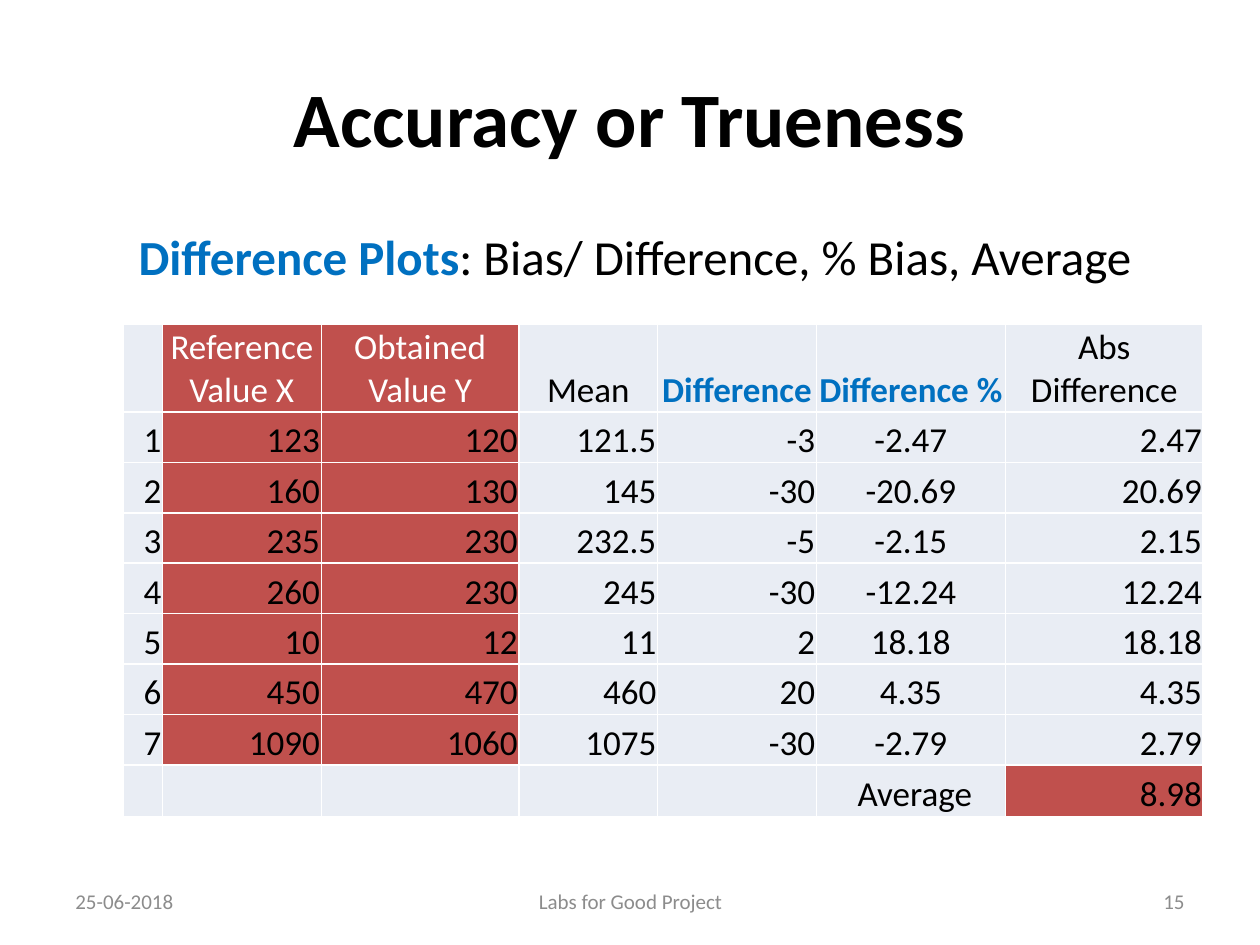
import pptx
import pptx.dml.color
import pptx.enum.text
import pptx.oxml
import pptx.oxml.ns
import pptx.util

RGBColor = pptx.dml.color.RGBColor
ALIGN = pptx.enum.text.PP_ALIGN
ANCHOR = pptx.enum.text.MSO_ANCHOR

BLACK = RGBColor(0x00, 0x00, 0x00)
WHITE = RGBColor(0xFF, 0xFF, 0xFF)
BLUE = RGBColor(0x00, 0x70, 0xC0)
RED = RGBColor(0xC0, 0x50, 0x4D)
PALE = RGBColor(0xE9, 0xED, 0xF4)
GRAY = RGBColor(0x8C, 0x8C, 0x8C)

HEADER = ["", "Reference Value X", "Obtained Value Y", "Mean",
          " Difference", "Difference %", "Abs Difference"]
ROWS = [
    ["1", "123", "120", "121.5", "-3", "-2.47", "2.47"],
    ["2", "160", "130", "145", "-30", "-20.69", "20.69"],
    ["3", "235", "230", "232.5", "-5", "-2.15", "2.15"],
    ["4", "260", "230", "245", "-30", "-12.24", "12.24"],
    ["5", "10", "12", "11", "2", "18.18", "18.18"],
    ["6", "450", "470", "460", "20", "4.35", "4.35"],
    ["7", "1090", "1060", "1075", "-30", "-2.79", "2.79"],
]
FOOTER = ["", "", "", "", "", "\N{NO-BREAK SPACE}Average", "8.98"]
COL_WIDTHS = [3.1, 12.6, 15.7, 11, 12.6, 15, 15.7]
ROW_HEIGHTS = [7] + [4] * 7 + [4.1]


class Deck:
    font = "Calibri"
    grid_cols, grid_rows = 100, 75

    def __init__(self, width, height):
        self.prs = pptx.Presentation()
        self.prs.slide_width = pptx.util.Inches(width)
        self.prs.slide_height = pptx.util.Inches(height)
        self.s = self.prs.slides.add_slide(self.prs.slide_layouts[1])

    def x(self, cols):
        return round(self.prs.slide_width * cols / self.grid_cols)

    def y(self, rows):
        return round(self.prs.slide_height * rows / self.grid_rows)

    def place(self, sp, left, top, width, height):
        box = {"left": self.x(left), "top": self.y(top),
               "width": self.x(width), "height": self.y(height)}
        for name, value in box.items():
            setattr(sp, name, value)

    def run(self, p, text, size, color, bold=False):
        r = p.add_run()
        r.text = text
        style = {"name": self.font, "size": pptx.util.Pt(size), "bold": bold}
        for name, value in style.items():
            setattr(r.font, name, value)
        r.font.color.rgb = color

    def title(self, text, *box):
        sp = self.s.shapes.title
        self.place(sp, *box)
        sp.text_frame.vertical_anchor = ANCHOR.MIDDLE
        p = sp.text_frame.paragraphs[0]
        p.alignment = ALIGN.CENTER
        self.run(p, text, 44, BLACK, True)

    def body(self, parts, *box):
        sp = self.s.placeholders[1]
        self.place(sp, *box)
        p = sp.text_frame.paragraphs[0]
        p.level = 1
        pPr = p._p.get_or_add_pPr()
        pPr.set("marL", str(self.x(5)))
        pPr.set("indent", "0")
        pPr.append(pptx.oxml.parse_xml(
            f"<a:buNone {pptx.oxml.ns.nsdecls('a')}/>"))
        for text, color, bold in parts:
            self.run(p, text, 28, color, bold)

    def label(self, text, align, *box):
        sp = self.s.shapes.add_textbox(0, 0, 0, 0)
        self.place(sp, *box)
        tf = sp.text_frame
        tf.word_wrap = True
        tf.vertical_anchor = ANCHOR.MIDDLE
        p = tf.paragraphs[0]
        p.alignment = align
        self.run(p, text, 12, GRAY)

    def borders(self, cell, color):
        tcPr = cell._tc.get_or_add_tcPr()
        for i, side in enumerate(("lnL", "lnR", "lnT", "lnB")):
            tcPr.insert(i, pptx.oxml.parse_xml(
                f'<a:{side} {pptx.oxml.ns.nsdecls("a")} w="12700"><a:solidFill>'
                f'<a:srgbClr val="{color}"/></a:solidFill></a:{side}>'))

    def cell(self, cell, text, fill, color, bold, align):
        cell.fill.solid()
        cell.fill.fore_color.rgb = fill
        self.borders(cell, WHITE)
        if not text:
            return
        edge = pptx.util.Inches(0.01)
        layout = {"margin_left": edge, "margin_right": edge, "margin_top": edge,
                  "margin_bottom": 0, "vertical_anchor": ANCHOR.BOTTOM}
        for name, value in layout.items():
            setattr(cell, name, value)
        p = cell.text_frame.paragraphs[0]
        p.alignment = align
        self.run(p, text, 20, color, bold)

    def table(self, rows, left, top, widths, heights):
        table = self.s.shapes.add_table(
            len(rows), len(widths), self.x(left), self.y(top),
            self.x(sum(widths)), self.y(sum(heights))).table
        for col, width in zip(table.columns, widths):
            col.width = self.x(width)
        for row, height in zip(table.rows, heights):
            row.height = self.y(height)
        last = len(rows) - 1
        for i, row in enumerate(rows):
            for j, text in enumerate(row):
                head = i == 0
                measured = j in (1, 2) and i < last
                average = (i, j) == (last, len(row) - 1)
                key = head and j in (4, 5)
                fill = RED if measured or average else PALE
                color = BLUE if key else WHITE if head and measured else BLACK
                align = ALIGN.CENTER if head or j == 5 else ALIGN.RIGHT
                self.cell(table.cell(i, j), text, fill, color, key, align)


def main():
    deck = Deck(10, 7.5)
    deck.title("Accuracy or Trueness", 5, 3, 90, 12.5)
    deck.body([("Difference Plots", BLUE, True),
               (": Bias/ Difference, % Bias, Average", BLACK, False)],
              5, 17.5, 90.7, 52.3)
    deck.table([HEADER, *ROWS, FOOTER], 9.8, 25.7, COL_WIDTHS, ROW_HEIGHTS)
    deck.label("25-06-2018", ALIGN.LEFT, 5, 69.5, 23.3, 4)
    deck.label("Labs for Good Project", ALIGN.CENTER, 34.2, 69.5, 31.7, 4)
    deck.label("15", ALIGN.RIGHT, 71.7, 69.5, 23.3, 4)
    deck.prs.save("out.pptx")


if __name__ == "__main__":
    main()
